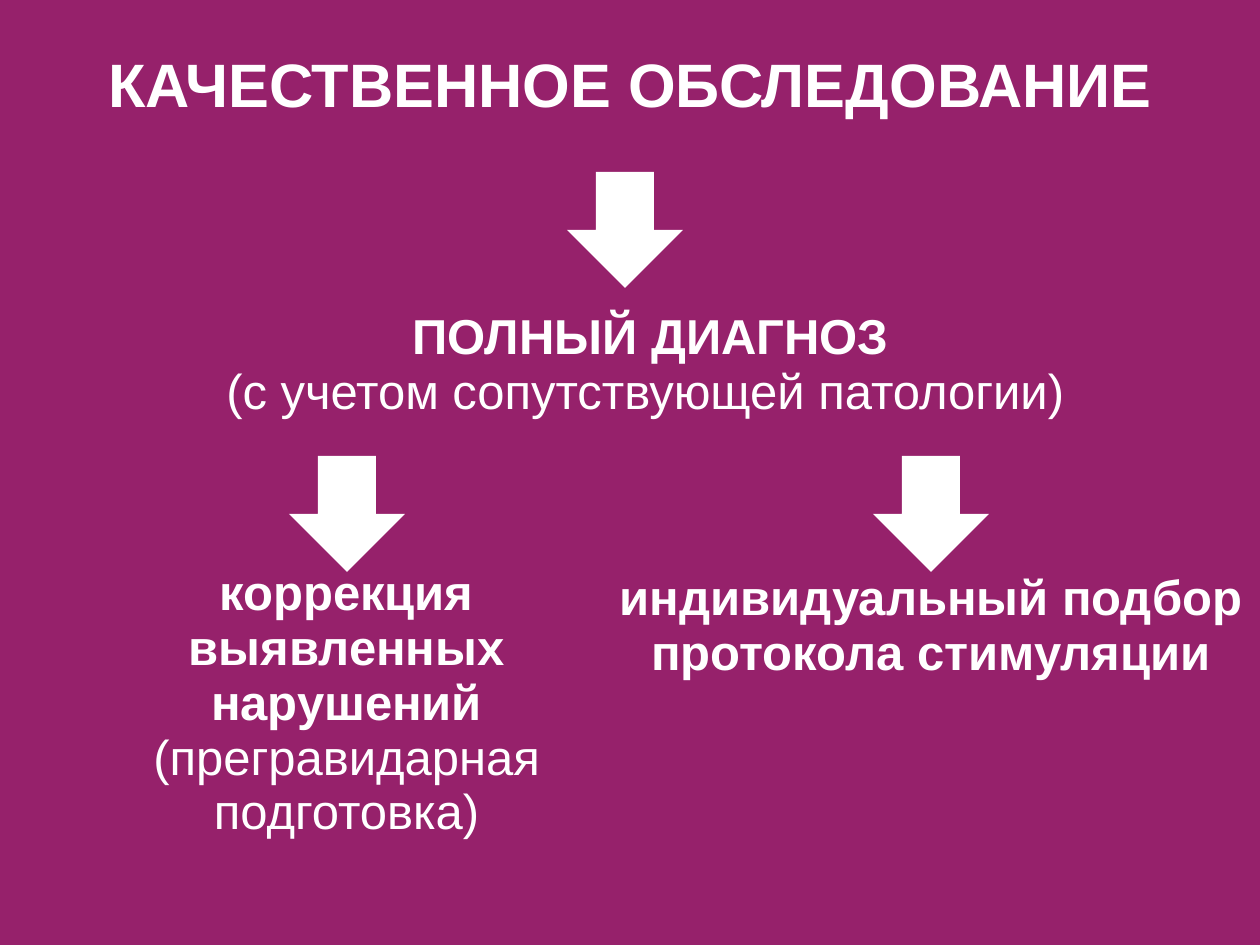
from pptx import Presentation
from pptx.dml.color import RGBColor
from pptx.enum.shapes import MSO_SHAPE
from pptx.enum.text import MSO_ANCHOR, MSO_AUTO_SIZE, PP_ALIGN
from pptx.util import Emu, Pt

COLORS = {"background": "96216B", "foreground": "FFFFFF"}
FONT = "Arial"
PX = 914400 / 126
SLIDE_SIZE = (1260, 945)

# Boxes are left, top, width, height in px
TITLE = ("КАЧЕСТВЕННОЕ ОБСЛЕДОВАНИЕ", (91, 47, 1079, 82))
CENTER, LEFT = PP_ALIGN.CENTER, PP_ALIGN.LEFT
# Each paragraph: text, bold, alignment
STAGES = [
    {"box": (214, 305, 873, 123), "wrap": False, "paragraphs": [
        ("ПОЛНЫЙ ДИАГНОЗ", True, CENTER),
        ("(с учетом сопутствующей патологии)", False, LEFT)]},
    {"box": (105, 561, 483, 289), "wrap": True, "paragraphs": [
        ("коррекция выявленных нарушений", True, CENTER),
        ("(прегравидарная подготовка)", False, CENTER)]},
    {"box": (602, 566, 658, 123), "wrap": True, "paragraphs": [
        ("индивидуальный подбор протокола стимуляции", True, CENTER)]},
]
ARROW_SIZE = 116
ARROW_CORNERS = [(567, 172), (289, 456), (873, 456)]


def emu(*lengths):
    return [Emu(round(length * PX)) for length in lengths]


def rgb(name):
    return RGBColor.from_string(COLORS[name])


def write(shape, paragraphs, size=28, wrap=False):
    frame = shape.text_frame
    frame.word_wrap = wrap
    frame.auto_size = MSO_AUTO_SIZE.SHAPE_TO_FIT_TEXT
    frame.vertical_anchor = MSO_ANCHOR.TOP
    for index, (text, bold, align) in enumerate(paragraphs):
        paragraph = frame.add_paragraph() if index else frame.paragraphs[0]
        paragraph.alignment = align
        paragraph.line_spacing = 0.93
        paragraph.space_before = Pt(0)
        run = paragraph.add_run()
        run.text = text
        run.font.name = FONT
        run.font.size = Pt(size)
        run.font.bold = bold
        run.font.color.rgb = rgb("foreground")


def main():
    deck = Presentation()
    deck.slide_width, deck.slide_height = emu(*SLIDE_SIZE)
    slide = deck.slides.add_slide(deck.slide_layouts[5])
    slide.background.fill.solid()
    slide.background.fill.fore_color.rgb = rgb("background")

    heading, heading_box = TITLE
    title = slide.shapes.title
    title.left, title.top, title.width, title.height = emu(*heading_box)
    write(title, [(heading, True, CENTER)], size=35)

    for stage in STAGES:
        write(slide.shapes.add_textbox(*emu(*stage["box"])),
              stage["paragraphs"], wrap=stage["wrap"])

    for corner in ARROW_CORNERS:
        arrow = slide.shapes.add_shape(
            MSO_SHAPE.DOWN_ARROW, *emu(*corner, ARROW_SIZE, ARROW_SIZE))
        arrow.shadow.inherit = False
        arrow.fill.solid()
        arrow.fill.fore_color.rgb = rgb("foreground")
        arrow.line.fill.background()

    deck.save("out.pptx")


if __name__ == "__main__":
    main()
